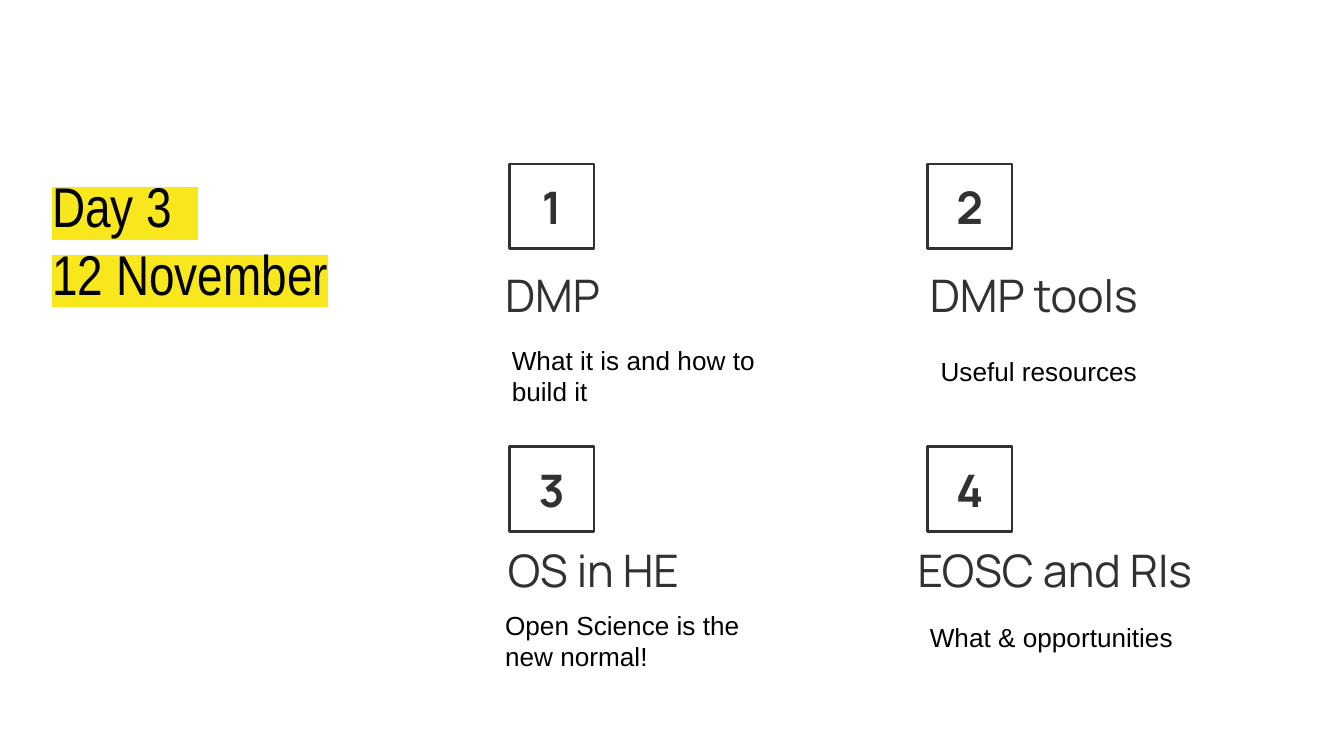
from dataclasses import dataclass

from lxml.etree import SubElement
from pptx import Presentation
from pptx.dml.color import RGBColor
from pptx.enum.shapes import MSO_SHAPE as Shape
from pptx.enum.text import MSO_ANCHOR as Anchor, MSO_AUTO_SIZE as AutoSize, PP_ALIGN as Align
from pptx.oxml.ns import qn
from pptx.util import Inches, Pt

WIDTH = Inches(10)
HEIGHT = WIDTH * 9 // 16
INSET = 1.0

# Grid: every length is a percentage of the slide's width
COLUMNS = (37.9, 69.0)
ROWS = (12.2, 33.25)
BADGE = 6.3
HEADING_HEIGHT = 5.8

INK, BLACK, YELLOW = "313131", "000000", "F8E71C"


@dataclass(frozen=True)
class Box:
    """Offset from the corner of the grid cell, and size."""
    dx: float
    dy: float
    width: float
    height: float


@dataclass(frozen=True)
class Topic:
    heading: str
    heading_box: Box
    lines: tuple[str, ...]
    detail_box: Box


TOPICS = (
    Topic("DMP", Box(-1.3, 6.85, 21, HEADING_HEIGHT),
          ("What it is and how to", "build it"), Box(-0.8, 12.4, 25.7, 6.7)),
    Topic("DMP tools", Box(-0.8, 6.85, 31.8, HEADING_HEIGHT),
          ("Useful resources",), Box(0, 12.4, 20.2, 6)),
    Topic("OS in HE", Box(-1.1, 6.25, 24.2, HEADING_HEIGHT),
          ("Open Science is the new normal!",), Box(-1.3, 11.75, 20.7, 5.3)),
    Topic("EOSC and RIs", Box(-1.7, 6.25, 27.9, HEADING_HEIGHT),
          ("What & opportunities",), Box(-0.8, 11.5, 21, 5.3)),
)


def share(percent: float) -> int:
    return round(WIDTH * percent / 100)


def color(value: str) -> RGBColor:
    return RGBColor.from_string(value)


def place(column: float, row: float, box: Box) -> tuple[int, int, int, int]:
    return (share(column + box.dx), share(row + box.dy),
            share(box.width), share(box.height))


def write(shape, lines: tuple[str, ...], font: str, size: float, ink: str,
          bold: bool = False, align=Align.LEFT, anchor=Anchor.MIDDLE) -> None:
    frame = shape.text_frame
    frame.text = "\n".join(lines)
    frame.word_wrap = True
    frame.auto_size = AutoSize.NONE
    frame.vertical_anchor = anchor
    frame.margin_left = frame.margin_right = share(INSET)
    frame.margin_top = frame.margin_bottom = share(INSET)
    for paragraph in frame.paragraphs:
        paragraph.alignment = align
        paragraph.line_spacing = 1.0
        for run in paragraph.runs:
            run.font.name, run.font.size, run.font.bold = font, Pt(size), bold
            run.font.color.rgb = color(ink)


def highlight(shape, value: str) -> None:
    for paragraph in shape.text_frame.paragraphs:
        for run in paragraph.runs:
            properties = run.font._element
            mark = SubElement(properties, qn("a:highlight"))
            SubElement(mark, qn("a:srgbClr"), val=value)
            properties.find(qn("a:solidFill")).addnext(mark)


def draw_badge(slide, column: float, row: float, number: int) -> None:
    shape = slide.shapes.add_shape(
        Shape.RECTANGLE, *place(column, row, Box(0, 0, BADGE, BADGE)))
    shape.shadow.inherit = False
    shape.fill.background()
    shape.line.color.rgb = color(INK)
    shape.line.width = Pt(1.5)
    write(shape, (str(number),), "Manrope", 24, INK, bold=True, align=Align.CENTER)


def draw_topic(slide, index: int, topic: Topic) -> None:
    column, row = COLUMNS[index % 2], ROWS[index // 2]
    draw_badge(slide, column, row, index + 1)
    heading = slide.shapes.add_textbox(*place(column, row, topic.heading_box))
    write(heading, (topic.heading,), "Manrope", 24, INK)
    detail = slide.shapes.add_textbox(*place(column, row, topic.detail_box))
    write(detail, topic.lines, "Arial", 14, BLACK)


def draw_title(slide) -> None:
    title = slide.shapes.title
    title.left, title.top, title.width, title.height = place(
        0, 0, Box(2.9, 11.8, 27.9, 19.5))
    # The yellow band runs on past the first line
    write(title, ("Day 3  ", "12 November"), "Arial Narrow", 30, BLACK,
          anchor=Anchor.TOP)
    highlight(title, YELLOW)


def main() -> None:
    presentation = Presentation()
    presentation.slide_width, presentation.slide_height = WIDTH, HEIGHT
    slide = presentation.slides.add_slide(presentation.slide_layouts[5])
    slide.background.fill.solid()
    slide.background.fill.fore_color.rgb = color("FFFFFF")
    draw_title(slide)
    for index, topic in enumerate(TOPICS):
        draw_topic(slide, index, topic)
    presentation.save("out.pptx")


if __name__ == "__main__":
    main()
